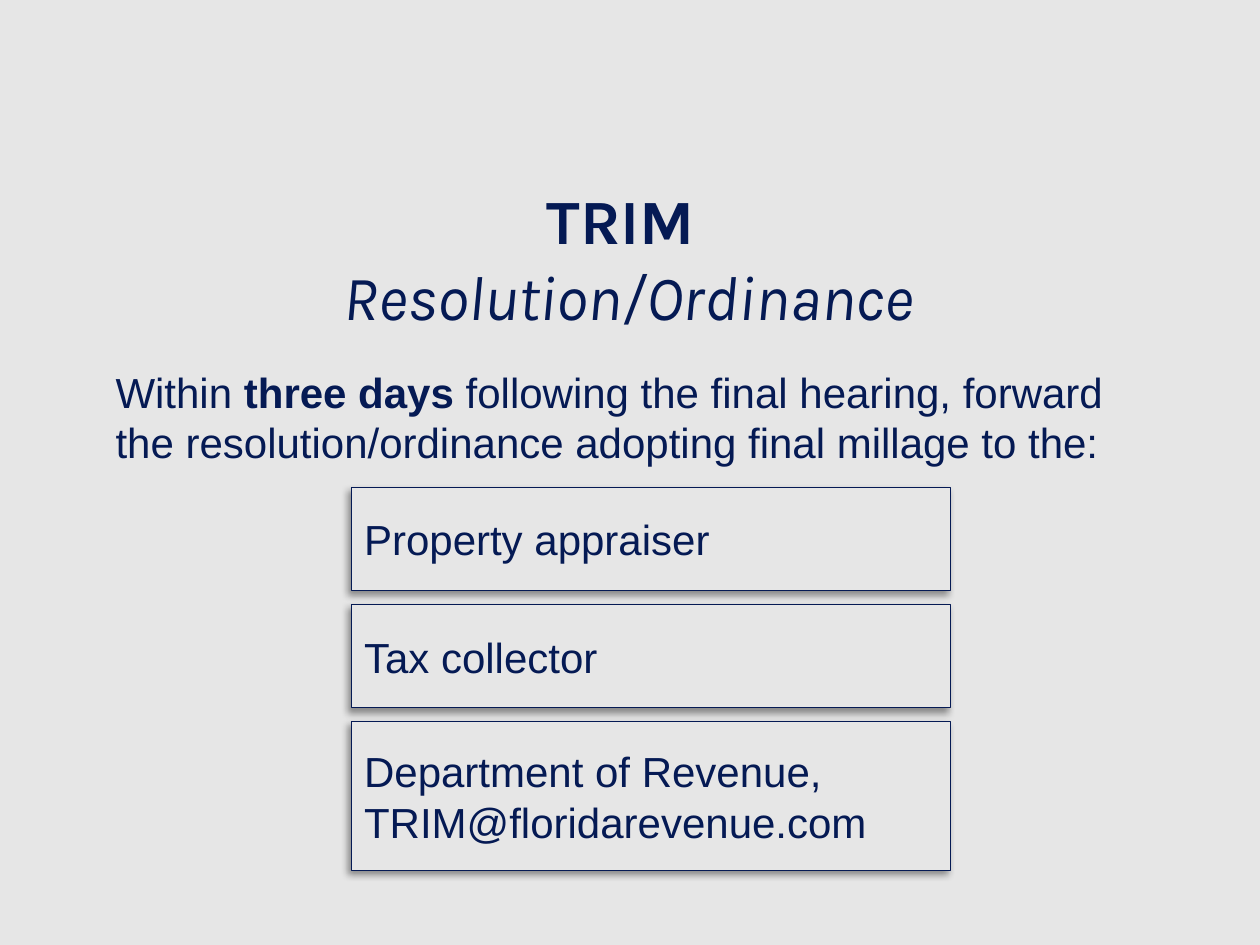
from lxml import etree
from pptx import Presentation
from pptx.dml.color import RGBColor
from pptx.enum.shapes import MSO_SHAPE as Shape
from pptx.enum.text import MSO_ANCHOR as Anchor, PP_ALIGN as Align
from pptx.oxml.ns import qn
from pptx.util import Cm, Pt

COLORS = {"navy": "051A54", "gray": "E6E6E6", "shadow": "000000"}

TITLE = [("TRIM \v", True, False), ("Resolution/Ordinance", False, True)]
BODY = [
    ("Within ", False, False),
    ("three days ", True, False),
    ("following the final hearing, forward the resolution/ordinance "
     "adopting final millage to the:", False, False),
]
RECIPIENTS = [
    ("Property appraiser", 2.08),
    ("Tax collector", 2.08),
    ("Department of Revenue, \vTRIM@floridarevenue.com", 3.0),
]
BOX_LEFT, BOX_TOP, BOX_WIDTH, BOX_GAP = 7.09, 9.83, 12.07, 0.28


def color(name):
    return RGBColor.from_string(COLORS[name])


def write(sp, runs, size, font, anchor, align=Align.LEFT):
    tf = sp.text_frame
    tf.word_wrap = True
    tf.vertical_anchor = anchor
    p = tf.paragraphs[0]
    p.alignment = align
    for text, bold, italic in runs:
        for i, part in enumerate(text.split("\v")):
            if i:
                p.add_line_break()
            if part:
                r = p.add_run()
                r.text = part
                r.font.name, r.font.size = font, Pt(size)
                r.font.bold, r.font.italic = bold, italic
                r.font.color.rgb = color("navy")


def add_shadow(sp):
    sp.shadow.inherit = False
    effects = sp._element.spPr.find(qn("a:effectLst"))
    outer = etree.SubElement(
        effects, qn("a:outerShdw"), blurRad=str(Pt(4)), dist=str(Pt(3)),
        dir=str(135 * 60000), algn="tr", rotWithShape="0")
    clr = etree.SubElement(outer, qn("a:srgbClr"), val=COLORS["shadow"])
    etree.SubElement(clr, qn("a:alpha"), val="40000")


def add_text(slide, box, *args):
    write(slide.shapes.add_textbox(*map(Cm, box)), *args)


def add_recipient(slide, text, top, height):
    sp = slide.shapes.add_shape(
        Shape.RECTANGLE, Cm(BOX_LEFT), Cm(top), Cm(BOX_WIDTH), Cm(height))
    sp.fill.solid()
    sp.fill.fore_color.rgb = color("gray")
    sp.line.color.rgb = color("navy")
    sp.line.width = Pt(0.75)
    add_shadow(sp)
    write(sp, [(text, False, False)], 24, "Arial", Anchor.MIDDLE)


def main():
    prs = Presentation()
    prs.slide_width, prs.slide_height = Cm(25.4), Cm(19.05)
    slide = prs.slides.add_slide(prs.slide_layouts[6])
    slide.background.fill.solid()
    slide.background.fill.fore_color.rgb = color("gray")

    add_text(slide, (0.71, 3.4, 23.93, 3.58), TITLE, 36, "Karla",
             Anchor.MIDDLE, Align.CENTER)
    add_text(slide, (2.08, 7.26, 21.23, 3.33), BODY, 24, "Arial", Anchor.TOP)

    boxes, top = [], BOX_TOP
    for text, height in RECIPIENTS:
        boxes.append((text, top, height))
        top += height + BOX_GAP
    for box in reversed(boxes):
        add_recipient(slide, *box)

    prs.save("out.pptx")


if __name__ == "__main__":
    main()
